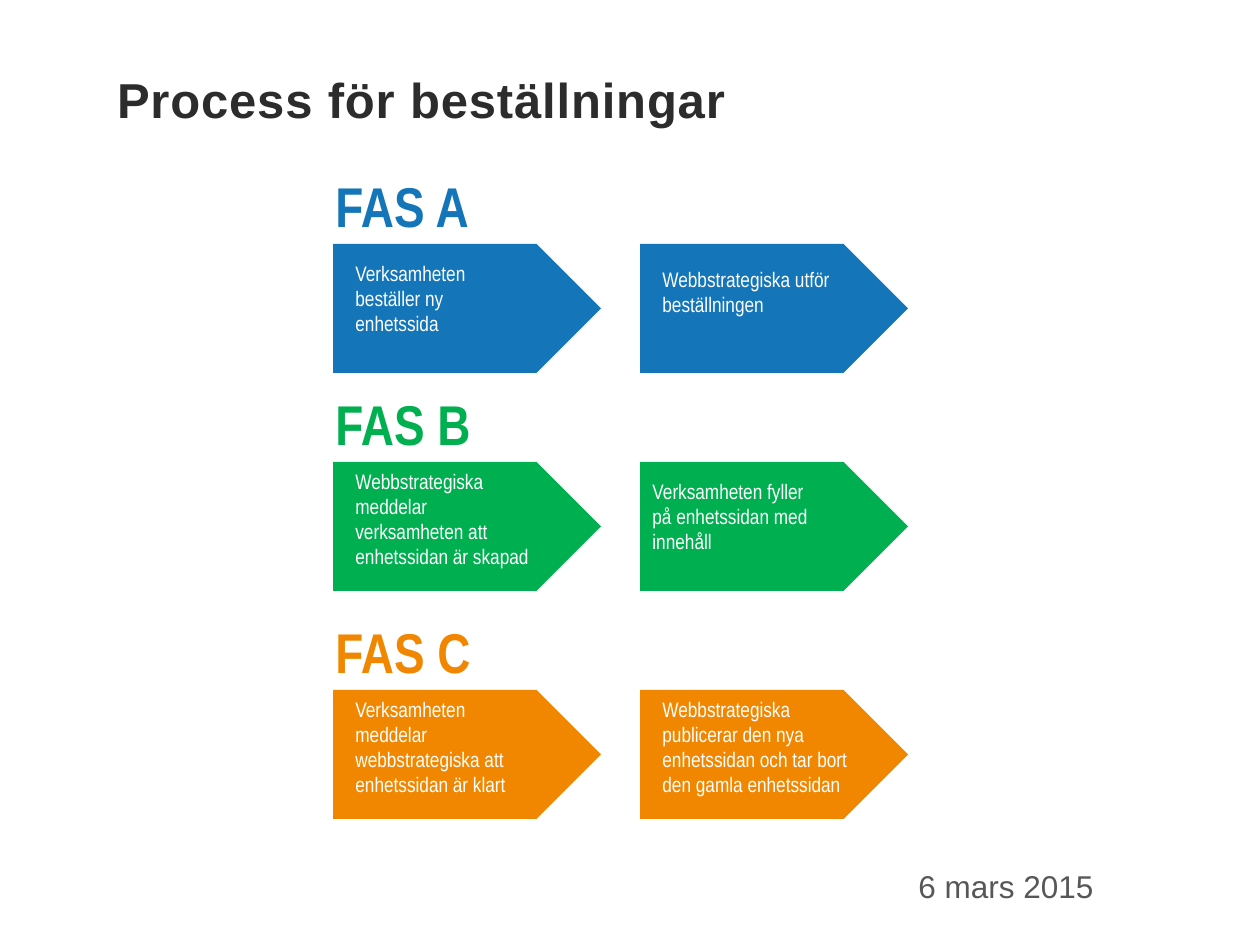
import pptx
import pptx.dml.color
import pptx.enum.shapes
import pptx.enum.text
import pptx.util

PX_PER_INCH = 126
TITLE_ONLY = 5


def px(length):
    return pptx.util.Emu(round(length * 914400 / PX_PER_INCH))


def color(hex_value):
    return pptx.dml.color.RGBColor.from_string(hex_value)


class ProcessSlide:
    heading_font = "Arial"
    step_font = "Arial Narrow"

    def __init__(self, presentation):
        layout = presentation.slide_layouts[TITLE_ONLY]
        self.slide = presentation.slides.add_slide(layout)

    def style(self, paragraph, font, size, hex_value, bold=False):
        paragraph.alignment = pptx.enum.text.PP_ALIGN.LEFT
        for run in paragraph.runs:
            run.font.name = font
            run.font.size = pptx.util.Pt(size)
            run.font.bold = bold
            run.font.color.rgb = color(hex_value)

    def title(self, text, left, top, width, height):
        heading = self.slide.shapes.title
        heading.left, heading.top = px(left), px(top)
        heading.width, heading.height = px(width), px(height)
        frame = heading.text_frame
        frame.text = text
        frame.auto_size = pptx.enum.text.MSO_AUTO_SIZE.NONE
        frame.vertical_anchor = pptx.enum.text.MSO_ANCHOR.MIDDLE
        frame.margin_left = frame.margin_right = 0
        frame.margin_top = frame.margin_bottom = 0
        paragraph = frame.paragraphs[0]
        paragraph.line_spacing = pptx.util.Pt(27)
        self.style(paragraph, self.heading_font, 28, "2C2C2C", bold=True)
        paragraph.runs[0]._r.get_or_add_rPr().set("spc", "50")

    def text(self, text, left, top, width, height, font, size, hex_value,
             bold=False, grow=True):
        box = self.slide.shapes.add_textbox(
            px(left), px(top), px(width), px(height))
        frame = box.text_frame
        frame.text = text
        frame.word_wrap = True
        if grow:
            frame.auto_size = pptx.enum.text.MSO_AUTO_SIZE.SHAPE_TO_FIT_TEXT
        self.style(frame.paragraphs[0], font, size, hex_value, bold)

    def arrow(self, left, top, hex_value):
        plate = self.slide.shapes.add_shape(
            pptx.enum.shapes.MSO_SHAPE.PENTAGON,
            px(left), px(top), px(268), px(129))
        plate.shadow.inherit = False
        plate.fill.solid()
        plate.fill.fore_color.rgb = color(hex_value)
        plate.line.fill.background()

    def step(self, text, left, top, hex_value, inset, drop, width, lines):
        self.arrow(left, top, hex_value)
        self.text(text, left + inset, top + drop, width, 13 + 25.5 * lines,
                  self.step_font, 12, "FFFFFF")

    def phase(self, name, top, hex_value, steps):
        self.text(name, 323, top - 79, 218, 81, self.step_font, 32,
                  hex_value, bold=True)
        for left, step in zip((333, 640), steps):
            self.step(step[0], left, top, hex_value, *step[1:])


PHASES = [
    ("FAS A", 244, "1475B8", [
        ("Verksamheten beställer ny enhetssida", 10, 10, 198, 3),
        ("Webbstrategiska utför beställningen", 10, 16, 198, 2),
    ]),
    ("FAS B", 462, "00B050", [
        ("Webbstrategiska meddelar verksamheten att enhetssidan är skapad",
         10, 0, 208, 4),
        ("Verksamheten fyller på enhetssidan med innehåll", 0, 10, 198, 3),
    ]),
    ("FAS C", 690, "F18700", [
        ("Verksamheten meddelar webbstrategiska att enhetssidan är klart",
         10, 0, 198, 4),
        ("Webbstrategiska publicerar den nya enhetssidan och tar bort "
         "den gamla enhetssidan", 10, 0, 218, 4),
    ]),
]


def main():
    presentation = pptx.Presentation()
    presentation.slide_width = px(1260)
    presentation.slide_height = px(945)
    process = ProcessSlide(presentation)
    process.title("Process för beställningar", 117, 26, 1037, 158)
    process.text("6 mars 2015", 906, 861, 309, 63,
                 process.heading_font, 18, "575757", grow=False)
    for phase in PHASES:
        process.phase(*phase)
    presentation.save("out.pptx")


if __name__ == "__main__":
    main()
